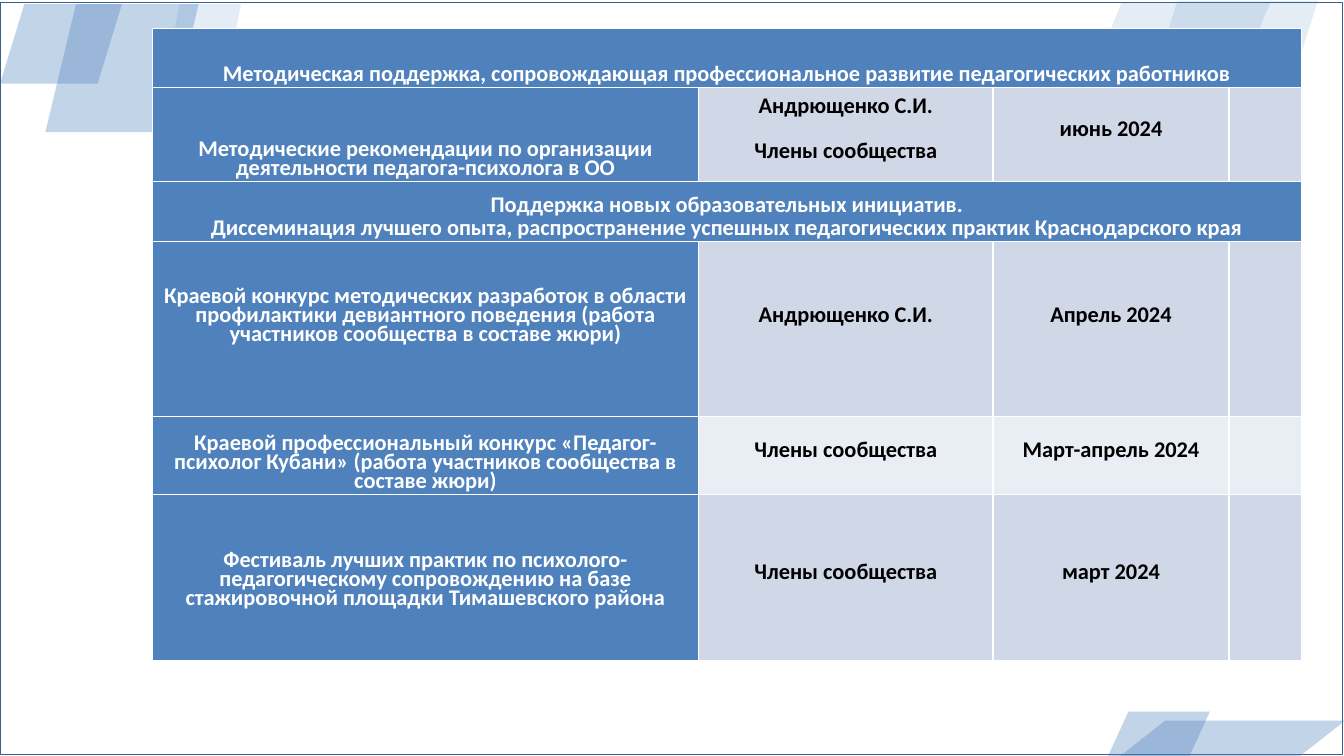
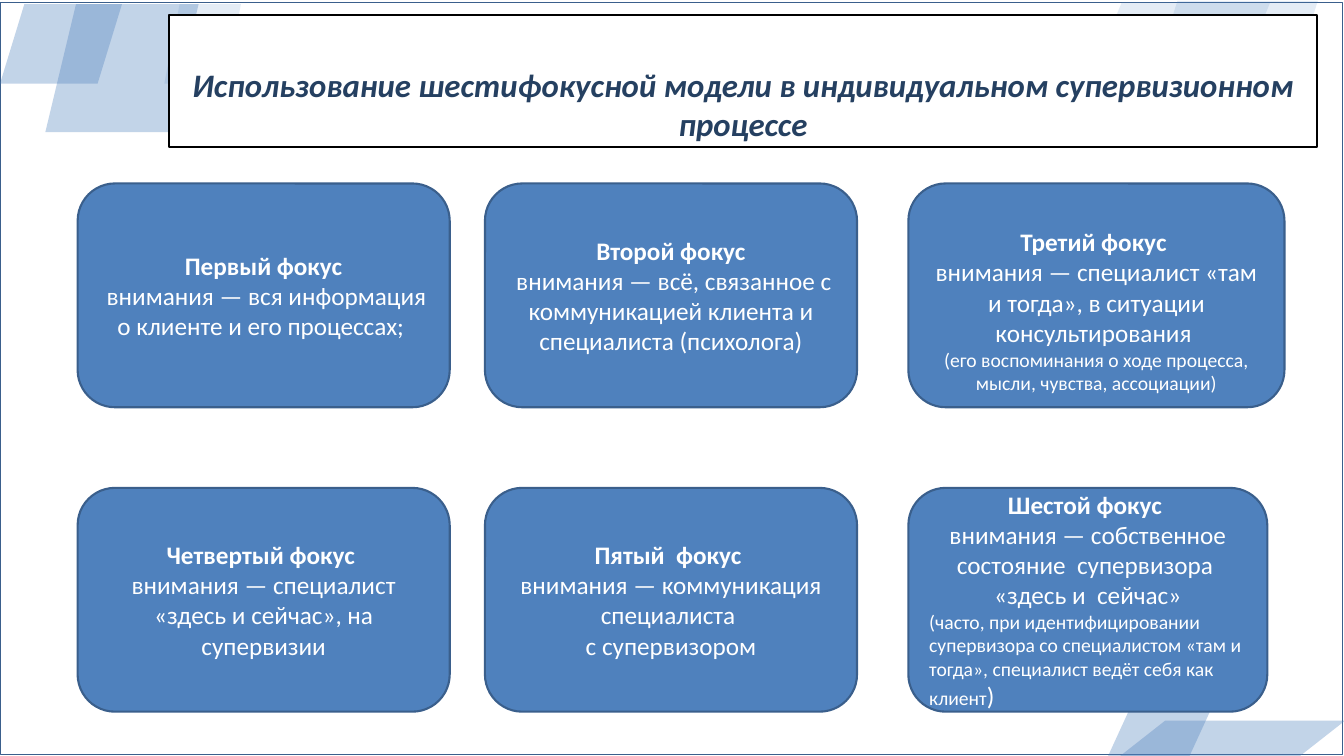
from pptx import Presentation
from pptx.dml.color import RGBColor as Rgb
from pptx.enum.shapes import MSO_SHAPE as Kind
from pptx.enum.text import MSO_ANCHOR as Anchor, PP_ALIGN as Align
from pptx.oxml.xmlchemy import OxmlElement as Node
from pptx.util import Inches, Pt

COLORS = {"blue": "4F81BD", "edge": "3A5F8C", "navy": "254061", "white": "FFFFFF",
          "black": "000000", "dark": "D0D8E8", "light": "E9EDF4"}

# Left, top, width, height and opacity of the slanted bands
BANDS = [(0.45, 0.04, 1.52, 1.27, 34), (0, 0.04, 1.21, 0.79, 34),
         (11.11, 7.15, 2.23, 0.35, 34), (10.99, 7.06, 1.01, 0.44, 34),
         (1.63, 0.04, 0.76, 0.79, 15), (10.76, 0.02, 1.84, 0.89, 15),
         (11.33, 0.01, 1.74, 1.1, 15)]


def color(name):
    return Rgb.from_string(COLORS[name])


def apply(item, values):
    for key, value in values.items():
        setattr(item, key, value)


class Deck:
    FONT = {"name": "Calibri", "size": Pt(16), "bold": True}

    def __init__(self):
        self.file = Presentation()
        apply(self.file, {"slide_width": Inches(13.33), "slide_height": Inches(7.5)})
        self.slide = None

    def page(self):
        """Start a slide with the shared frame and bands."""
        self.slide = self.file.slides.add_slide(self.file.slide_layouts[6])
        self.shape(Kind.RECTANGLE, (0, 0.02, 13.31, 7.46), None, "edge", 0.25)
        for *box, alpha in BANDS:
            band = self.shape(Kind.FLOWCHART_DATA, box, "blue")
            node = Node("a:alpha")
            node.set("val", str(alpha * 1000))
            band.fill._xPr.solidFill[0].append(node)

    def shape(self, kind, box, fill=None, line=None, width=1.5):
        shape = self.slide.shapes.add_shape(kind, *map(Inches, box))
        shape.shadow.inherit = False
        if fill:
            shape.fill.solid()
            shape.fill.fore_color.rgb = color(fill)
        else:
            shape.fill.background()
        if line:
            shape.line.color.rgb = color(line)
            shape.line.width = Pt(width)
        else:
            shape.line.fill.background()
        return shape

    def para(self, frame, first, runs, tint, align=Align.CENTER, **form):
        """Write one paragraph from (text, font values) pairs."""
        para = frame.paragraphs[0] if first else frame.add_paragraph()
        apply(para, {"alignment": align, **form})
        for text, font in runs:
            run = para.add_run()
            run.text = text
            apply(run.font, {**self.FONT, **font})
            run.font.color.rgb = color(tint)

    def title(self, text):
        box = self.shape(Kind.RECTANGLE, (1.68, 0.15, 11.38, 1.31), "white", "black")
        frame = box.text_frame
        apply(frame, {"word_wrap": True, "vertical_anchor": Anchor.BOTTOM})
        apply(frame, {f"margin_{side}": Inches(0.04)
                      for side in ("left", "right", "top", "bottom")})
        self.para(frame, True, [(text, {"size": Pt(23.4), "italic": True})], "navy")

    def card(self, box, head, body, top=0.05):
        """Draw a rounded card: bold head, then lists of sized runs."""
        frame = self.shape(Kind.ROUNDED_RECTANGLE, box, "blue", "edge").text_frame
        apply(frame, {"word_wrap": True, "vertical_anchor": Anchor.MIDDLE,
                      "margin_top": Inches(top)})
        self.para(frame, True, [(head, {"size": Pt(18)})], "white")
        for align, *runs in body:
            runs = [(text, {"size": Pt(size), "bold": False}) for text, size in runs]
            self.para(frame, False, runs, "white", align)

    def cell(self, cell, lines, fill, anchor, lead=11, gap=21, after=0, foot=0):
        cell.fill.solid()
        cell.fill.fore_color.rgb = color(fill)
        apply(cell, {"vertical_anchor": anchor, "margin_left": Inches(0.01),
                     "margin_right": Inches(0.01), "margin_top": 0,
                     "margin_bottom": Inches(foot)})
        tint = "white" if fill == "blue" else "black"
        for i, text in enumerate(lines):
            self.para(cell.text_frame, i == 0, [(text, {})], tint,
                      line_spacing=Pt(lead), space_before=Pt(gap if i else 0),
                      space_after=Pt(0 if i else after))

    def table(self, spot, cols, rows):
        """Rows: height, fill, cells, foot of first cell, foot of the rest."""
        size = sum(cols), sum(row[0] for row in rows)
        table = self.slide.shapes.add_table(
            len(rows), len(cols), *map(Inches, (*spot, *size))).table
        for col, width in zip(table.columns, cols):
            col.width = Inches(width)
        for r, (height, fill, cells, foot, rest) in enumerate(rows):
            table.rows[r].height = Inches(height)
            if len(cells) == 1:
                table.cell(r, 0).merge(table.cell(r, len(cols) - 1))
                self.cell(table.cell(r, 0), cells[0], "blue", Anchor.BOTTOM,
                          gap=3, after=3 if len(cells[0]) > 1 else 0)
                continue
            self.cell(table.cell(r, 0), cells[0], "blue", Anchor.BOTTOM, 13.7, foot=foot)
            for c, lines in enumerate(cells[1:], 1):
                self.cell(table.cell(r, c), lines, fill, Anchor.MIDDLE, foot=rest)


def plan(deck):
    deck.page()
    chief, team = "Андрющенко С.И.", "Члены сообщества"
    deck.table((1.51, 0.28), (5.42, 2.92, 2.34, 0.72), [
        (0.59, "blue", [["Методическая поддержка, сопровождающая профессиональное "
                         "развитие педагогических работников"]], 0, 0),
        (0.93, "dark", [["Методические рекомендации по организации деятельности "
                         "педагога-психолога в ОО"], [chief, team], ["июнь 2024"], []], 0, 0),
        (0.6, "blue", [["Поддержка новых образовательных инициатив.",
                        "Диссеминация лучшего опыта, распространение успешных "
                        "педагогических практик Краснодарского края"]], 0, 0),
        (1.73, "dark", [["Краевой конкурс методических разработок в области "
                         "профилактики девиантного поведения (работа участников "
                         "сообщества в составе жюри)"], [chief], ["Апрель 2024"], []],
         0.68, 0.16),
        (0.78, "light", [["Краевой профессиональный конкурс «Педагог-психолог Кубани» "
                          "(работа участников сообщества в составе жюри)"],
                         [team], ["Март-апрель 2024"], []], 0, 0),
        (1.64, "dark", [["Фестиваль лучших практик по психолого-педагогическому "
                         "сопровождению на базе стажировочной площадки "
                         "Тимашевского района"], [team], ["март 2024"], []], 0.48, 0),
    ])


def focus(deck):
    deck.page()
    deck.title("Использование шестифокусной модели в индивидуальном супервизионном процессе")
    mid, left = Align.CENTER, Align.LEFT
    cards = [
        ("Первый фокус", [(mid, (" внимания — вся информация о клиенте "
                                 "и его процессах; ", 18))]),
        ("Второй фокус", [(mid, (" внимания — всё, связанное с коммуникацией "
                                 "клиента и специалиста (психолога)", 18))]),
        ("Третий фокус ", [(mid, ("внимания — специалист «там и тогда», "
                                  "в ситуации консультирования ", 18)),
                           (mid, ("(его воспоминания о ходе процесса, "
                                  "мысли, чувства, ассоциации)", 14))], 0.35),
        ("Четвертый фокус ", [(mid, ("внимания — специалист «здесь и сейчас», "
                                     "на супервизии", 18))]),
        ("Пятый  фокус ", [(mid, ("внимания — коммуникация специалиста ", 18)),
                           (mid, ("с супервизором", 18))]),
        ("Шестой фокус ", [(mid, ("внимания — собственное состояние  супервизора ", 18)),
                           (mid, (" «здесь и  сейчас» ", 18)),
                           (left, ("(часто, при идентифицировании супервизора со "
                                   "специалистом «там и тогда», специалист ведёт "
                                   "себя как клиент", 14), (")", 18))]),
    ]
    # Three columns, two rows; the last column varies in width
    xs, wide = (0.77, 4.81, 9.01), (3.69, 3.69, 3.73, 3.69, 3.69, 3.56)
    for i, (card, width) in enumerate(zip(cards, wide)):
        row, col = divmod(i, 3)
        deck.card((xs[col], 1.82 + row * 3.02, width, 2.22), *card)


def main():
    deck = Deck()
    plan(deck)
    focus(deck)
    deck.file.save("out.pptx")


if __name__ == "__main__":
    main()
